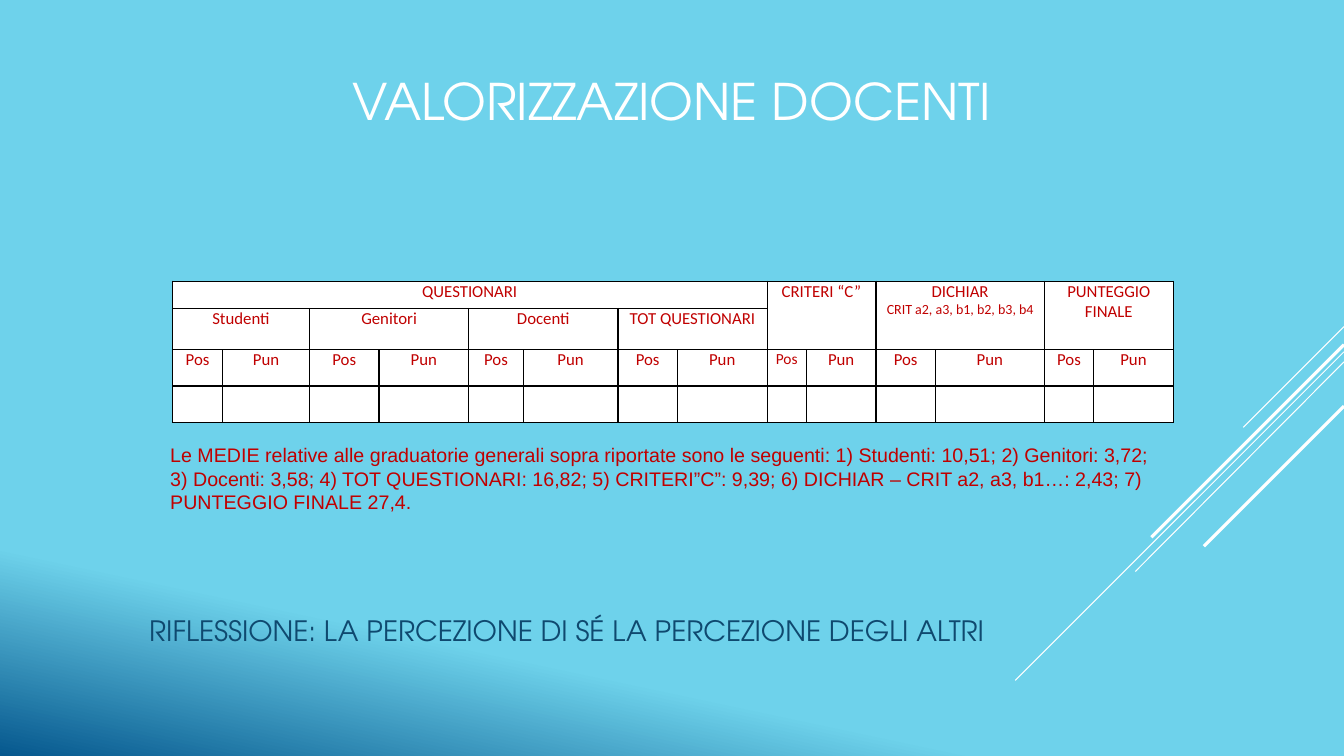
from dataclasses import dataclass

from lxml import etree
from pptx import Presentation
from pptx import util as u
from pptx.dml.color import RGBColor
from pptx.enum import shapes, text
from pptx.oxml import ns

WHITE, RED, NAVY = "FFFFFF", "C00000", "0F496F"
DISPLAY_FONT = "TeX Gyre Adventor"
COLUMN_WIDTHS = (0.5, 0.86, 0.69, 0.89, 0.54, 0.94, 0.59,
                 0.89, 0.39, 0.69, 0.59, 1.08, 0.49, 0.79)
ROW_HEIGHTS = (0.27, 0.41, 0.36, 0.36)
NARROW_COLUMN = 8


@dataclass
class Ray:
    top: float
    end_x: float
    end_y: float
    weight: float = 0.75


@dataclass
class Heading:
    row: int
    column: int
    row_span: int
    column_span: int
    lines: tuple[str, ...]
    last_size: float = 12


RAYS = (
    Ray(3.24, 12.33, 4.24),
    Ray(3.49, 10.07, 6.75),
    Ray(3.59, 11.26, 5.67),
    Ray(3.42, 11.42, 5.33, 2.25),
    Ray(4.03, 11.94, 5.42, 2.25),
)
GROUPS = ("Studenti", "Genitori", "Docenti", "TOT QUESTIONARI")
HEADINGS = (
    Heading(0, 0, 1, 8, ("QUESTIONARI",)),
    Heading(0, 8, 2, 2, ("CRITERI “C”",)),
    Heading(0, 10, 2, 2, ("DICHIAR", "CRIT a2, a3, b1, b2, b3, b4"), 10),
    Heading(0, 12, 2, 2, ("PUNTEGGIO", "FINALE")),
    *(Heading(1, 2 * i, 1, 2, (group,)) for i, group in enumerate(GROUPS)),
)


def color(hex_value: str) -> RGBColor:
    return RGBColor.from_string(hex_value)


def write(paragraph, content: str, *, size: float, font: str = "Calibri",
          fill: str = RED, align=text.PP_ALIGN.CENTER) -> None:
    paragraph.alignment = align
    run = paragraph.add_run()
    run.text = content
    run.font.size = u.Pt(size)
    run.font.name = font
    run.font.color.rgb = color(fill)


def place(shape, left: float, top: float, width: float, height: float) -> None:
    shape.left, shape.top = u.Inches(left), u.Inches(top)
    shape.width, shape.height = u.Inches(width), u.Inches(height)


def draw_ray(slide, ray: Ray) -> None:
    line = slide.shapes.add_connector(
        shapes.MSO_CONNECTOR.STRAIGHT, u.Inches(13.33), u.Inches(ray.top),
        u.Inches(ray.end_x), u.Inches(ray.end_y))
    line.line.color.rgb = color(WHITE)
    line.line.width = u.Pt(ray.weight)
    etree.SubElement(line._element.spPr, ns.qn("a:effectLst"))


def format_cell(cell) -> None:
    cell.margin_left = cell.margin_right = u.Inches(0.07)
    cell.margin_top = cell.margin_bottom = 0
    cell.fill.solid()
    cell.fill.fore_color.rgb = color(WHITE)
    properties = cell._tc.get_or_add_tcPr()
    for position, side in enumerate(("lnL", "lnR", "lnT", "lnB")):
        border = etree.Element(ns.qn(f"a:{side}"), w=str(u.Pt(1)))
        solid = etree.SubElement(border, ns.qn("a:solidFill"))
        etree.SubElement(solid, ns.qn("a:srgbClr"), val="000000")
        properties.insert(position, border)
    # Keeps empty cells from stretching their row
    paragraph = cell.text_frame.paragraphs[0]
    etree.SubElement(paragraph._p, ns.qn("a:endParaRPr"), sz="1200")


def draw_heading(table, heading: Heading) -> None:
    cell = table.cell(heading.row, heading.column)
    cell.merge(table.cell(heading.row + heading.row_span - 1,
                          heading.column + heading.column_span - 1))
    frame = cell.text_frame
    for index, line in enumerate(heading.lines):
        paragraph = frame.add_paragraph() if index else frame.paragraphs[0]
        write(paragraph, line, size=heading.last_size if index else 12)


def draw_scores(slide) -> None:
    table = slide.shapes.add_table(
        len(ROW_HEIGHTS), len(COLUMN_WIDTHS), u.Inches(1.71), u.Inches(2.79),
        u.Inches(sum(COLUMN_WIDTHS)), u.Inches(sum(ROW_HEIGHTS))).table
    table.first_row = table.horz_banding = False
    for column, width in zip(table.columns, COLUMN_WIDTHS):
        column.width = u.Inches(width)
    for row, height in zip(table.rows, ROW_HEIGHTS):
        row.height = u.Inches(height)
    for cell in table.iter_cells():
        format_cell(cell)
    for heading in HEADINGS:
        draw_heading(table, heading)
    for column in range(len(COLUMN_WIDTHS)):
        write(table.cell(2, column).text_frame.paragraphs[0],
              "Pun" if column % 2 else "Pos",
              size=11 if column == NARROW_COLUMN else 12)


def main() -> None:
    deck = Presentation()
    deck.slide_width, deck.slide_height = u.Inches(13.33), u.Inches(7.5)
    slide = deck.slides.add_slide(deck.slide_layouts[1])

    # Background
    background = slide.background.fill
    background.gradient()
    background.gradient_angle = 258
    for stop, (position, shade) in zip(
            background.gradient_stops, ((0.8, "6ED2EB"), (1, "06588E"))):
        stop.position = position
        stop.color.rgb = color(shade)
    for ray in RAYS:
        draw_ray(slide, ray)

    # Title
    title = slide.shapes.title
    place(title, 0, 0, 13.33, 2)
    title.text_frame.vertical_anchor = text.MSO_ANCHOR.MIDDLE
    write(title.text_frame.paragraphs[0], "VALORIZZAZIONE DOCENTI",
          size=36, font=DISPLAY_FONT, fill=WHITE)

    # Closing reflection
    reflection = slide.placeholders[1]
    place(reflection, 0, 2, 13.33, 5.5)
    frame = reflection.text_frame
    frame.auto_size = text.MSO_AUTO_SIZE.NONE
    frame.vertical_anchor = text.MSO_ANCHOR.BOTTOM
    frame.margin_left, frame.margin_bottom = u.Inches(1.48), u.Inches(1.08)
    paragraph = frame.paragraphs[0]
    write(paragraph, "RIFLESSIONE: LA PERCEZIONE DI SÉ LA PERCEZIONE DEGLI ALTRI",
          size=20, font=DISPLAY_FONT, fill=NAVY, align=text.PP_ALIGN.LEFT)
    paragraph.space_after = u.Pt(6)
    bullet = paragraph._p.get_or_add_pPr()
    bullet.set("marL", "0")
    bullet.set("indent", "0")
    etree.SubElement(bullet, ns.qn("a:buNone"))

    # Score table and averages
    draw_scores(slide)
    averages = slide.shapes.add_textbox(
        u.Inches(1.59), u.Inches(4.34), u.Inches(10.04), u.Inches(0.81))
    frame = averages.text_frame
    frame.word_wrap = True
    frame.auto_size = text.MSO_AUTO_SIZE.SHAPE_TO_FIT_TEXT
    frame.vertical_anchor = text.MSO_ANCHOR.MIDDLE
    write(frame.paragraphs[0],
          "Le MEDIE relative alle graduatorie generali sopra riportate sono le "
          "seguenti: 1) Studenti: 10,51; 2) Genitori: 3,72; 3) Docenti: 3,58; "
          "4) TOT QUESTIONARI: 16,82; 5) CRITERI”C”: 9,39; 6) DICHIAR – CRIT "
          "a2, a3, b1…: 2,43; 7) PUNTEGGIO FINALE 27,4.",
          size=14, font="Arial", align=text.PP_ALIGN.LEFT)

    deck.save("out.pptx")


if __name__ == "__main__":
    main()
